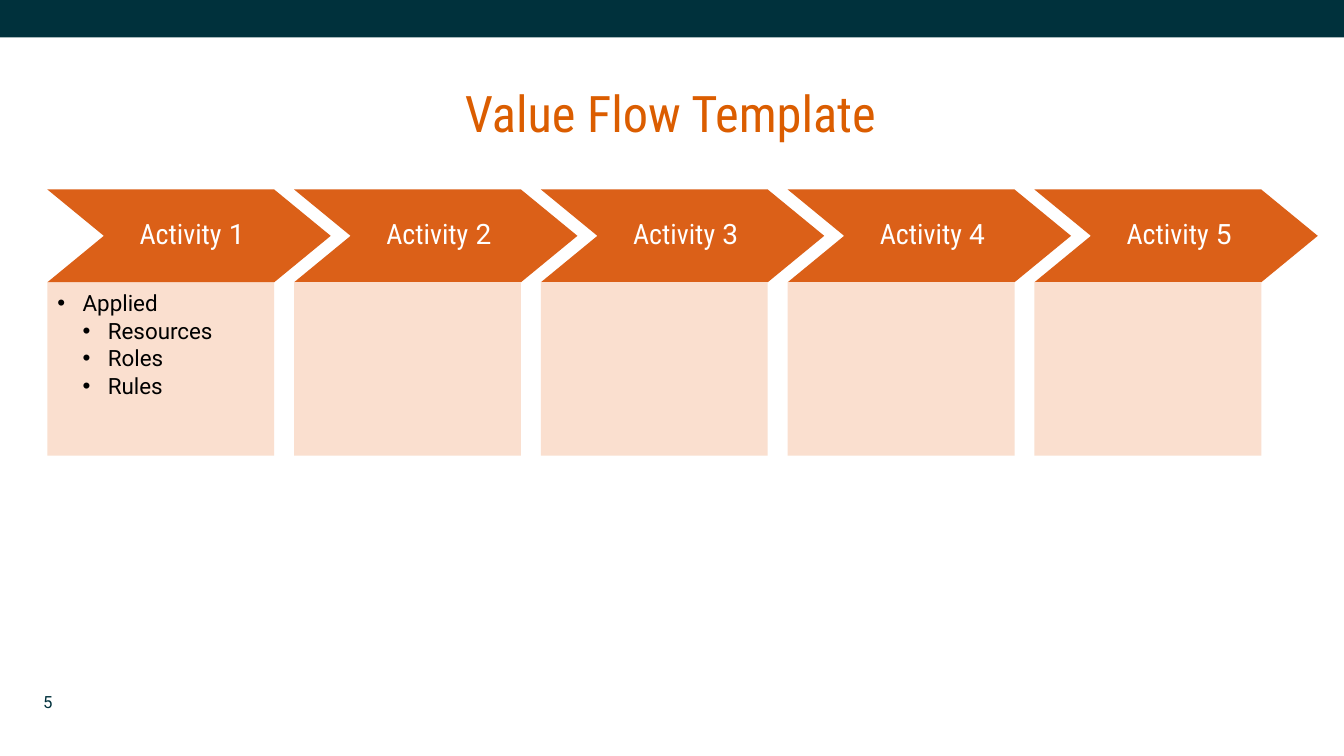
from dataclasses import dataclass

from lxml import etree
from pptx import Presentation
from pptx.dml.color import RGBColor
from pptx.enum.shapes import MSO_SHAPE
from pptx.enum.text import MSO_ANCHOR, MSO_AUTO_SIZE, PP_ALIGN
from pptx.oxml.ns import qn
from pptx.util import Inches, Pt

NAVY = RGBColor(0x00, 0x31, 0x3C)
WHITE = RGBColor(0xFF, 0xFF, 0xFF)
BLACK = RGBColor(0x00, 0x00, 0x00)
TITLE_ORANGE = RGBColor(0xDB, 0x5D, 0x00)
ARROW_ORANGE = RGBColor(0xDB, 0x60, 0x18)
PANEL_PEACH = RGBColor(0xFA, 0xDF, 0xCF)

RECTANGLE, CHEVRON = MSO_SHAPE.RECTANGLE, MSO_SHAPE.CHEVRON
TOP, MIDDLE = MSO_ANCHOR.TOP, MSO_ANCHOR.MIDDLE
CENTER, LEFT = PP_ALIGN.CENTER, PP_ALIGN.LEFT
NO_AUTOFIT = MSO_AUTO_SIZE.NONE

BODY_FONT, HEAD_FONT = "Roboto", "Roboto Condensed"
SLIDE_W, SLIDE_H = 13.33, 7.5
BAND_H = 0.37
ACTIVITY_COUNT = 5
FIRST_COLUMN, LAST_COLUMN = 0.47, 10.26
COLUMN_PITCH = (LAST_COLUMN - FIRST_COLUMN) / (ACTIVITY_COUNT - 1)
ARROW_TOP, ARROW_H, ARROW_W, ARROW_TIP = 1.88, 0.92, 2.81, 0.56
PANEL_TOP, PANEL_W, PANEL_H = 2.8, 2.25, 1.72
BULLET_INDENT = 0.25


@dataclass(frozen=True)
class Box:
    left: float
    top: float
    width: float
    height: float

    def lengths(self) -> tuple:
        return tuple(Inches(n) for n in (self.left, self.top, self.width, self.height))


@dataclass(frozen=True)
class Bullet:
    text: str
    level: int = 0


APPLIED = [Bullet("Applied"), Bullet("Resources", 1), Bullet("Roles", 1), Bullet("Rules", 1)]


def column_box(column: int, top: float, width: float, height: float) -> Box:
    return Box(FIRST_COLUMN + column * COLUMN_PITCH, top, width, height)


def add_filled(slide, kind, box: Box, color: RGBColor):
    shape = slide.shapes.add_shape(kind, *box.lengths())
    shape.shadow.inherit = False
    shape.fill.solid()
    shape.fill.fore_color.rgb = color
    shape.line.fill.background()
    return shape


def place(shape, box: Box) -> None:
    shape.left, shape.top, shape.width, shape.height = box.lengths()


def set_frame(frame, anchor, left=0.1, top=0.1, right=0.1, bottom=0.1) -> None:
    frame.word_wrap = True
    frame.auto_size = NO_AUTOFIT
    frame.vertical_anchor = anchor
    frame.margin_left, frame.margin_top = Inches(left), Inches(top)
    frame.margin_right, frame.margin_bottom = Inches(right), Inches(bottom)


def style(paragraph, name: str, size: int, color: RGBColor, align=LEFT) -> None:
    paragraph.alignment = align
    paragraph.font.name = name
    paragraph.font.size = Pt(size)
    paragraph.font.color.rgb = color


def add_arrow(slide, column: int) -> None:
    """Add a chevron label; its text area already leaves out notch and tip."""
    box = column_box(column, ARROW_TOP, ARROW_W, ARROW_H)
    arrow = add_filled(slide, CHEVRON, box, ARROW_ORANGE)
    arrow.adjustments[0] = ARROW_TIP / ARROW_H
    set_frame(arrow.text_frame, MIDDLE, 0.06, 0.03, 0, 0.03)
    label = arrow.text_frame.paragraphs[0]
    label.line_spacing = 0.9
    style(label, HEAD_FONT, 20, WHITE, CENTER)
    label.add_run().text = "Activity"
    number = label.add_run()
    number.text = f" {column + 1}"
    number.font.name = BODY_FONT


def fill_panel(panel, box: Box, bullets: list[Bullet]) -> None:
    """Turn the body placeholder into the first panel with its bullet list."""
    place(panel, box)
    panel.fill.solid()
    panel.fill.fore_color.rgb = PANEL_PEACH
    frame = panel.text_frame
    set_frame(frame, TOP)
    for index, bullet in enumerate(bullets):
        item = frame.add_paragraph() if index else frame.paragraphs[0]
        item.text = bullet.text
        item.level = bullet.level
        properties = item._p.get_or_add_pPr()
        properties.set("marL", str(Inches(BULLET_INDENT * (bullet.level + 1))))
        properties.set("indent", str(-Inches(BULLET_INDENT)))
        etree.SubElement(properties, qn("a:buFont")).set("typeface", "Arial")
        etree.SubElement(properties, qn("a:buChar")).set("char", "•")
        item.line_spacing = 0.9
        item.space_before = Pt(0)
        item.space_after = Pt(2.4)
        style(item, BODY_FONT, 16, BLACK)


def main() -> None:
    deck = Presentation()
    deck.slide_width, deck.slide_height = Inches(SLIDE_W), Inches(SLIDE_H)
    slide = deck.slides.add_slide(deck.slide_layouts[1])
    slide.background.fill.solid()
    slide.background.fill.fore_color.rgb = NAVY

    page = add_filled(slide, RECTANGLE, Box(0, BAND_H, SLIDE_W, SLIDE_H - BAND_H), WHITE)
    slide.shapes._spTree.insert(2, page._element)  # behind the placeholders

    title = slide.shapes.title
    place(title, Box(1.39, 0.71, 10.52, 0.88))
    set_frame(title.text_frame, TOP)
    title.text_frame.text = "Value Flow Template"
    style(title.text_frame.paragraphs[0], HEAD_FONT, 36, TITLE_ORANGE, CENTER)

    for column in range(ACTIVITY_COUNT):
        add_arrow(slide, column)
        panel_box = column_box(column, PANEL_TOP, PANEL_W, PANEL_H)
        if column == 0:
            fill_panel(slide.placeholders[1], panel_box, APPLIED)
        else:
            add_filled(slide, RECTANGLE, panel_box, PANEL_PEACH)

    page_number = slide.shapes.add_textbox(*Box(0.33, 6.82, 0.87, 0.28).lengths())
    set_frame(page_number.text_frame, MIDDLE)
    page_number.text_frame.text = "5"
    style(page_number.text_frame.paragraphs[0], BODY_FONT, 12, NAVY)

    deck.save("out.pptx")


if __name__ == "__main__":
    main()
